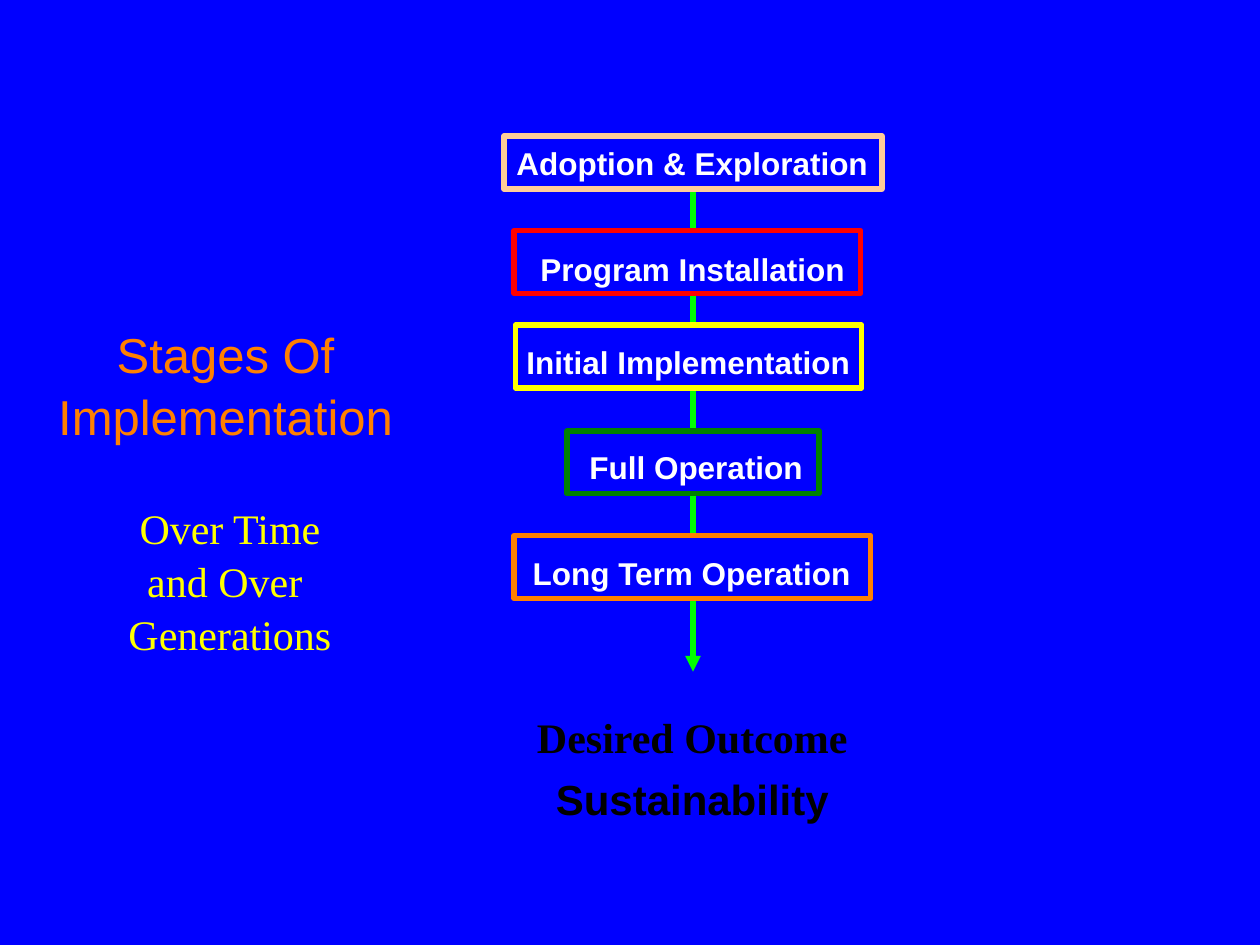
from lxml import etree
from pptx import Presentation
from pptx.dml.color import RGBColor
from pptx.enum import shapes, text
from pptx.oxml.ns import qn
from pptx.util import Inches, Pt

# Content: label, frame colour, frame box, label box (left, top, width, height)
STAGES = [
    ("Adoption & Exploration", "FFCC99", (4, 1.08, 3, 0.42), (4, 1.08, 2.99, 0.4)),
    ("Program Installation", "FF0000", (4.08, 1.83, 2.75, 0.5), (4.19, 1.92, 2.62, 0.4)),
    ("Initial Implementation", "FFFF00", (4.09, 2.58, 2.75, 0.5), (4.08, 2.66, 2.77, 0.4)),
    ("Full Operation", "008000", (4.5, 3.42, 2, 0.5), (4.58, 3.49, 1.9, 0.4)),
    ("Long Term Operation", "FF8000", (4.08, 4.25, 2.83, 0.5), (4.13, 4.33, 2.74, 0.4)),
]
TITLE = "Stages Of Implementation"
SUBTITLE = ["Over Time", "and Over ", "Generations"]
OUTCOME = ["Desired Outcome", "Sustainability"]

THEME = {
    "background": "0000FF",
    "arrow": "00FF00",
    "line": 3,
    "spacing": 1.05,
    "title": dict(name="Arial", size=28, color="FF8000", bold=False),
    "subtitle": dict(name="Times New Roman", size=24, color="FFFF00", bold=False),
    "stage": dict(name="Arial", size=18, color="FFFFFF", bold=True),
    "outcome": dict(name="Times New Roman", size=24, color="000000", bold=True),
}
THEME["result"] = {**THEME["outcome"], "name": "Arial"}
CENTER = text.PP_ALIGN.CENTER


def rgb(value):
    return RGBColor.from_string(value)


def inches(box):
    return [Inches(v) for v in box]


def write(tf, lines, styles, align, wrap=True):
    tf.word_wrap = wrap
    for i, (line, style) in enumerate(zip(lines, styles)):
        p = tf.paragraphs[0] if i == 0 else tf.add_paragraph()
        p.alignment = align
        p.line_spacing = THEME["spacing"]
        r = p.add_run()
        r.text = line
        fmt = dict(THEME[style])
        r.font.color.rgb = rgb(fmt.pop("color"))
        fmt["size"] = Pt(fmt["size"])
        for key, value in fmt.items():
            setattr(r.font, key, value)


def add_stage(s, label, color, frame_box, label_box):
    group = s.shapes.add_group_shape()
    frame = group.shapes.add_shape(shapes.MSO_SHAPE.RECTANGLE, *inches(frame_box))
    frame.shadow.inherit = False
    frame.fill.solid()
    frame.fill.fore_color.rgb = rgb(THEME["background"])
    frame.line.color.rgb = rgb(color)
    frame.line.width = Pt(THEME["line"])
    caption = group.shapes.add_textbox(*inches(label_box))
    write(caption.text_frame, [label], ["stage"], text.PP_ALIGN.LEFT, wrap=False)
    return frame


def main():
    prs = Presentation()
    prs.slide_width, prs.slide_height = Inches(10), Inches(7.5)
    s = prs.slides.add_slide(prs.slide_layouts[5])
    s.background.fill.solid()
    s.background.fill.fore_color.rgb = rgb(THEME["background"])

    # Arrow running behind the stages
    arrow = s.shapes.add_connector(
        shapes.MSO_CONNECTOR.STRAIGHT, *inches((5.5, 1.5, 5.5, 5.33)))
    arrow.line.color.rgb = rgb(THEME["arrow"])
    arrow.line.width = Pt(THEME["line"])
    etree.SubElement(arrow.line._get_or_add_ln(), qn("a:tailEnd"), type="triangle")
    etree.SubElement(arrow._element.spPr, qn("a:effectLst"))

    # Stages, with the arrow starting under the first
    frames = [add_stage(s, *stage) for stage in STAGES]
    arrow.begin_connect(frames[0], 2)

    # Outcome
    outcome = s.shapes.add_textbox(*inches((3.83, 5.58, 3.33, 0.98)))
    write(outcome.text_frame, OUTCOME, ["outcome", "result"], CENTER)
    outcome.text_frame.paragraphs[1].space_before = Pt(4.8)

    # Title and subtitle
    title = s.shapes.title
    title.left, title.top, title.width, title.height = inches((0, 2.42, 3.58, 1.25))
    title.text_frame.vertical_anchor = text.MSO_ANCHOR.MIDDLE
    write(title.text_frame, [TITLE], ["title"], CENTER)
    subtitle = s.shapes.add_textbox(*inches((0.92, 3.92, 1.81, 1.3)))
    write(subtitle.text_frame, SUBTITLE, ["subtitle"] * len(SUBTITLE), CENTER)

    prs.save("out.pptx")


if __name__ == "__main__":
    main()
